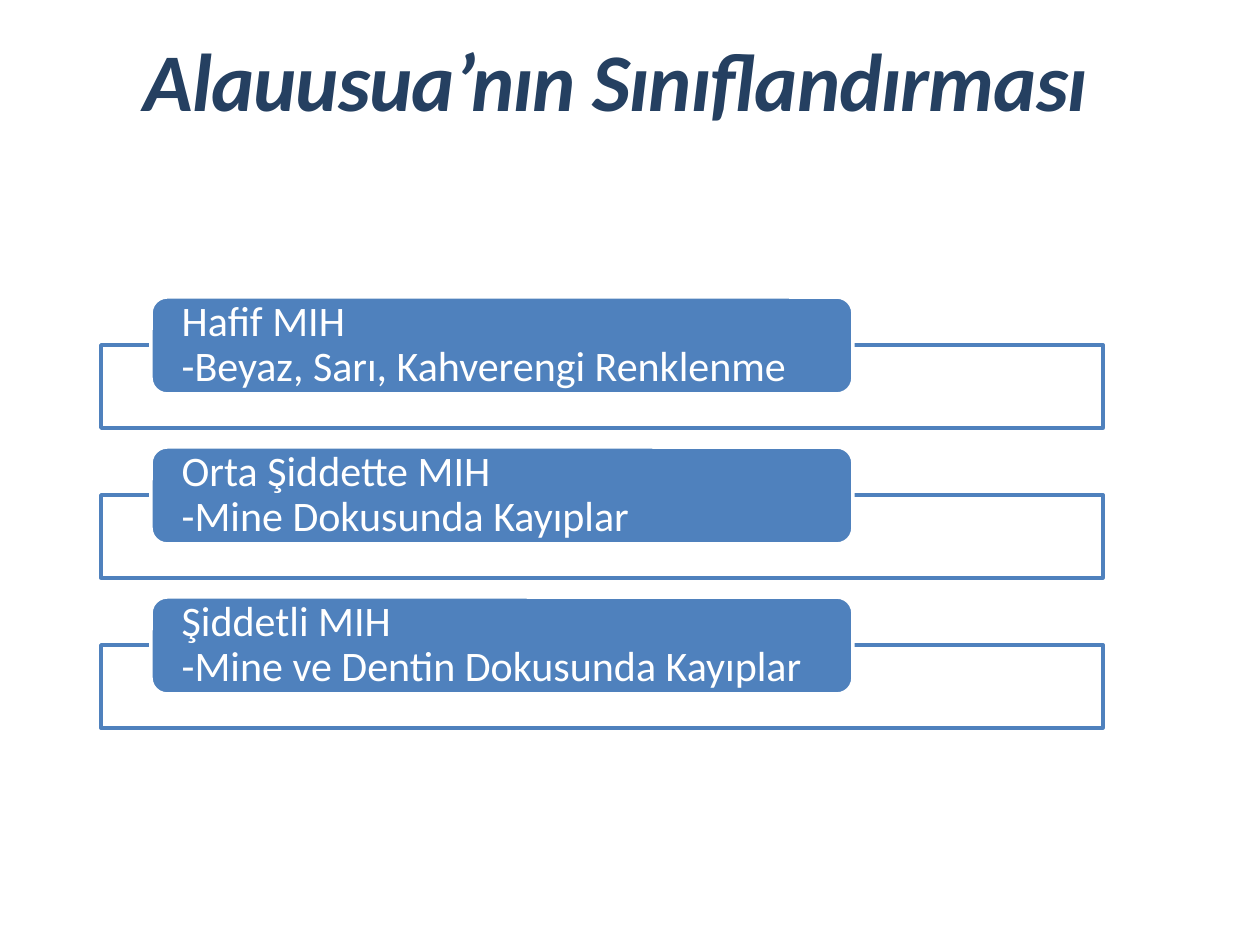
from lxml import etree
from pptx import Presentation
from pptx import util as u
from pptx.dml.color import RGBColor
from pptx.enum import shapes, text
from pptx.oxml.ns import qn

PX = 914400 // 126
NAVY = RGBColor(0x25, 0x40, 0x61)
BLUE = RGBColor(0x4F, 0x81, 0xBD)
WHITE = RGBColor(0xFF, 0xFF, 0xFF)
PITCH = 150
GRADES = [
    ("Hafif MIH", "-Beyaz, Sarı, Kahverengi Renklenme"),
    ("Orta Şiddette MIH", "-Mine Dokusunda Kayıplar"),
    ("Şiddetli MIH", "-Mine ve Dentin Dokusunda Kayıplar"),
]


def px(n):
    return u.Emu(n * PX)


def apply(obj, **values):
    for name, value in values.items():
        setattr(obj, name, value)


def write(tf, content, color, para, font):
    p = tf.paragraphs[0]
    p.text = content
    apply(p, **para)
    for r in p.runs:
        apply(r.font, name="Calibri", **font)
        r.font.color.rgb = color
    return p


def add_title(s, content):
    sp = s.shapes.title
    apply(sp, left=px(127), top=px(38), width=px(977), height=px(154))
    tf = sp.text_frame
    apply(tf, word_wrap=True, auto_size=text.MSO_AUTO_SIZE.NONE,
          vertical_anchor=text.MSO_ANCHOR.TOP)
    p = write(tf, content, NAVY,
              dict(alignment=text.PP_ALIGN.CENTER, line_spacing=0.85),
              dict(size=u.Pt(46.8), bold=True, italic=True))
    for r in p.runs:
        r.font._element.set("spc", "-50")


def add_box(parent, kind, box, fill, line):
    sp = parent.shapes.add_shape(kind, *map(px, box))
    sp.shadow.inherit = False
    sp.fill.solid()
    sp.fill.fore_color.rgb = fill
    sp.line.color.rgb = line
    sp.line.width = u.Pt(2)
    return sp


def set_opacity(sp, percent):
    color = sp._element.spPr.find(qn("a:solidFill"))[0]
    etree.SubElement(color, qn("a:alpha")).set("val", str(percent * 1000))


def add_grade(group, lines, y):
    frame = add_box(group, shapes.MSO_SHAPE.RECTANGLE,
                    (101, y + 48, 1002, 83), WHITE, BLUE)
    set_opacity(frame, 90)
    label = add_box(group, shapes.MSO_SHAPE.ROUNDED_RECTANGLE,
                    (151, y, 702, 97), BLUE, WHITE)
    tf = label.text_frame
    apply(tf, word_wrap=True, vertical_anchor=text.MSO_ANCHOR.MIDDLE,
          margin_left=px(26), margin_right=px(26), margin_top=0, margin_bottom=0)
    write(tf, "\v".join(lines), WHITE,
          dict(alignment=text.PP_ALIGN.LEFT, line_spacing=0.9),
          dict(size=u.Pt(24)))


def main():
    prs = Presentation()
    apply(prs, slide_width=px(1260), slide_height=px(945))
    s = prs.slides.add_slide(prs.slide_layouts[5])
    add_title(s, "Alauusua’nın Sınıflandırması")
    group = s.shapes.add_group_shape()
    for i, lines in enumerate(GRADES):
        add_grade(group, lines, 297 + i * PITCH)
    prs.save("out.pptx")


if __name__ == "__main__":
    main()
